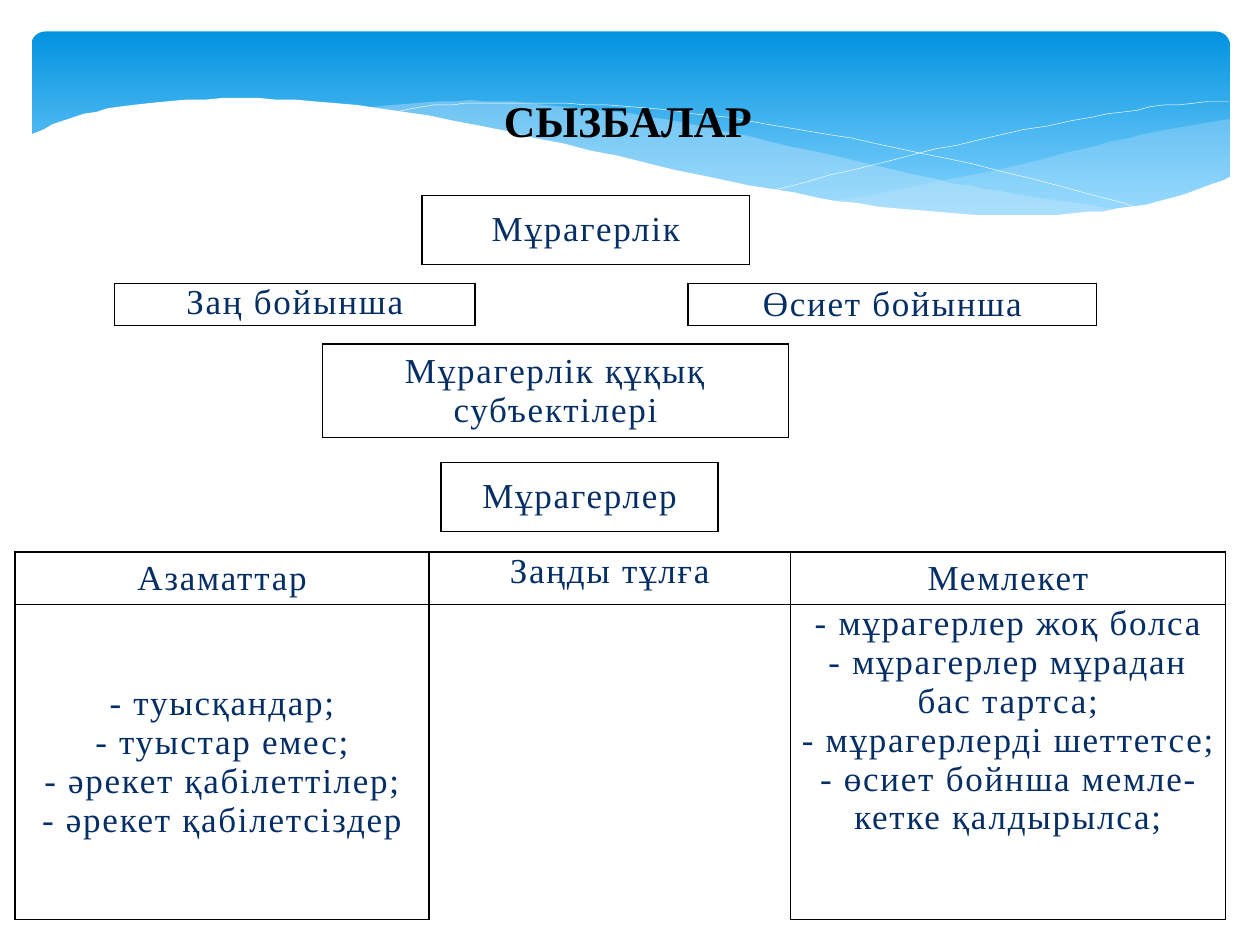
from lxml import etree
from pptx import Presentation
from pptx.dml.color import RGBColor
from pptx.enum.shapes import MSO_SHAPE
from pptx.enum.text import MSO_ANCHOR, PP_ALIGN
from pptx.oxml.ns import qn
from pptx.util import Pt

MID, TOP = MSO_ANCHOR.MIDDLE, MSO_ANCHOR.TOP
CENTER = PP_ALIGN.CENTER
ROUND = MSO_SHAPE.ROUNDED_RECTANGLE

# Content
HEX = {"deep": "0293E0", "sky": "83D3FE", "veil": "C6E7FC",
       "white": "FFFFFF", "black": "000000", "navy": "052E65"}
FONT = "Times New Roman"
TITLE = "СЫЗБАЛАР"

# Tables: left, top, column widths, row heights, rows of (lines, anchor, borders)
TABLES = [
    (241.2, 111.6, [187.2], [39.6], [[(["Мұрагерлік"], MID, "LRTB")]]),
    (65.5, 162, [206, 121.7, 233.5], [24], [[
        (["Заң бойынша"], TOP, "LRTB"),
        ([], TOP, "LR"),
        (["Өсиет бойынша"], MID, "LRTB")]]),
    (184.3, 196.6, [266.4], [53.3],
     [[(["Мұрагерлік құқық субъектілері"], MID, "LRTB")]]),
    (252, 264.2, [158.4], [39.6], [[(["Мұрагерлер"], MID, "LRTB")]]),
    (8.6, 315.4, [236.6, 206.5, 248.6], [30, 180], [
        [(["Азаматтар"], MID, "LRTB"),
         (["Заңды тұлға"], TOP, "LRTB"),
         (["Мемлекет"], MID, "LRTB")],
        [(["- туысқандар;", "- туыстар емес;", "- әрекет қабілеттілер;",
           "- әрекет қабілетсіздер"], MID, "LRTB"),
         ([], TOP, "LRT"),
         (["- мұрагерлер жоқ болса", "- мұрагерлер мұрадан бас тартса;",
           "- мұрагерлерді шеттетсе;", "- өсиет бойнша мемле-",
           "кетке қалдырылса;"], TOP, "LRTB")]]),
]

# Waves: smooth edges given by key points, then fill, opacity in percent
WAVES = [
    ([[(702.7, 67.7), (652, 77), (620, 85), (561, 98.6), (476, 115.2)],
      [(476, 115.2), (518, 120.2), (562, 123.7), (601, 123.9),
       (634, 120.5), (668, 113.8), (702.7, 101.5)]], "veil", 29),
    ([[(643, 120.2), (581, 111), (533.5, 102.2), (453, 83.5), (399.6, 72),
       (352, 64), (302.4, 59), (260, 57.5), (206, 62)],
      [(206, 62), (260.6, 69.8), (323, 83.5), (407.5, 103), (479, 116),
       (538.6, 122.4), (589, 124.5), (624, 122.4), (643, 120.2)]], "veil", 40),
    ([[(222.5, 64.8), (248, 60.5), (278.6, 59), (324, 59), (384, 63.4),
       (438, 70.6), (500.4, 82), (572.4, 98), (653, 119.5)]], None, 100),
    ([[(441.4, 108.7), (500.4, 93.6), (558.7, 80), (623.5, 67),
       (665, 60.5), (702, 57.6)]], None, 100),
    ([[(16.6, 77.4), (42.5, 67), (76.3, 60), (127.4, 56.3), (180, 58),
       (244.8, 66.2), (321.8, 82), (399.6, 100), (466.6, 112.6),
       (522.7, 120.2), (582.5, 123.4), (630, 120.5), (669.6, 113),
       (703.4, 101.3)],
      [(703.4, 161.3), (16.6, 161.3)]], "white", 100),
]


def rgb(name):
    return RGBColor.from_string(HEX[name])


def smooth(keys, steps=5):
    """Catmull-Rom curve through the key points."""
    pts = [keys[0]] + keys + [keys[-1]]
    out = [keys[0]]
    for a, b, c, d in zip(pts, pts[1:], pts[2:], pts[3:]):
        for i in range(1, steps + 1):
            t = i / steps
            out.append(tuple(
                (2 * q + (r - p) * t + (2 * p - 5 * q + 4 * r - s) * t ** 2
                 + (3 * q - p - 3 * r + s) * t ** 3) / 2
                for p, q, r, s in zip(a, b, c, d)))
    return out


def add_wave(slide, edges, fill, alpha):
    pts = [p for edge in edges
           for p in (smooth(edge) if len(edge) > 2 else edge)]
    pen = slide.shapes.build_freeform(*pts[0], scale=Pt(1))
    pen.add_line_segments(pts[1:], close=fill is not None)
    wave = pen.convert_to_shape()
    wave.shadow.inherit = False
    if fill is None:
        wave.fill.background()
        wave.line.color.rgb = rgb("white")
        wave.line.width = Pt(0.25)
        return
    wave.line.fill.background()
    wave.fill.solid()
    wave.fill.fore_color.rgb = rgb(fill)
    if alpha < 100:
        tint = wave._element.spPr.find(".//" + qn("a:srgbClr"))
        etree.SubElement(tint, qn("a:alpha"), val=str(alpha * 1000))


def write(para, text, look, color):
    run = para.add_run()
    run.text = text
    for key, val in look.items():
        setattr(run.font, key, val)
    run.font.color.rgb = rgb(color)
    return run


def set_sides(cell, sides):
    props = cell._tc.get_or_add_tcPr()
    for i, side in enumerate("LRTB"):
        line = etree.Element(qn("a:ln" + side), w=str(Pt(1)))
        if side in sides:
            fill = etree.SubElement(line, qn("a:solidFill"))
            etree.SubElement(fill, qn("a:srgbClr"), val=HEX["black"])
        else:
            etree.SubElement(line, qn("a:noFill"))
        props.insert(i, line)


def fill_cell(cell, lines, anchor, sides):
    form = {"vertical_anchor": anchor, "margin_left": Pt(5),
            "margin_right": Pt(5), "margin_top": 0, "margin_bottom": 0}
    for key, val in form.items():
        setattr(cell, key, val)
    cell.fill.background()
    set_sides(cell, sides)
    frame = cell.text_frame
    for i, text in enumerate(lines):
        para = frame.add_paragraph() if i else frame.paragraphs[0]
        para.alignment = CENTER
        run = write(para, text, {"name": FONT, "size": Pt(20), "bold": False}, "navy")
        run.font._element.set("spc", "100")


def add_grid(slide, left, top, cols, rows, cells):
    grid = slide.shapes.add_table(len(rows), len(cols), Pt(left), Pt(top),
                                  Pt(sum(cols)), Pt(sum(rows))).table
    grid.first_row = grid.horz_banding = False
    for col, wide in zip(grid.columns, cols):
        col.width = Pt(wide)
    for row, high, line in zip(grid.rows, rows, cells):
        row.height = Pt(high)
        for cell, item in zip(row.cells, line):
            fill_cell(cell, *item)


def main():
    deck = Presentation()
    deck.slide_width, deck.slide_height = Pt(720), Pt(540)
    slide = deck.slides.add_slide(deck.slide_layouts[6])

    # Blue band with waves
    band = slide.shapes.add_shape(ROUND, Pt(18), Pt(18), Pt(684.7), Pt(112.3))
    band.adjustments[0] = 0.07
    band.shadow.inherit = False
    band.line.fill.background()
    band.fill.gradient()
    band.fill.gradient_angle = 270
    for stop, spot, name in zip(band.fill.gradient_stops, (0, 0.9), ("deep", "sky")):
        stop.position = spot
        stop.color.rgb = rgb(name)
    for wave in WAVES:
        add_wave(slide, *wave)

    # Title
    box = slide.shapes.add_textbox(Pt(280.8), Pt(47.5), Pt(209.5), Pt(59))
    frame = box.text_frame
    frame.word_wrap = True
    frame.margin_top = Pt(6)
    write(frame.paragraphs[0], TITLE,
          {"name": FONT, "size": Pt(25), "bold": True}, "black")

    # Scheme tables
    for grid in TABLES:
        add_grid(slide, *grid)
    deck.save("out.pptx")


if __name__ == "__main__":
    main()
